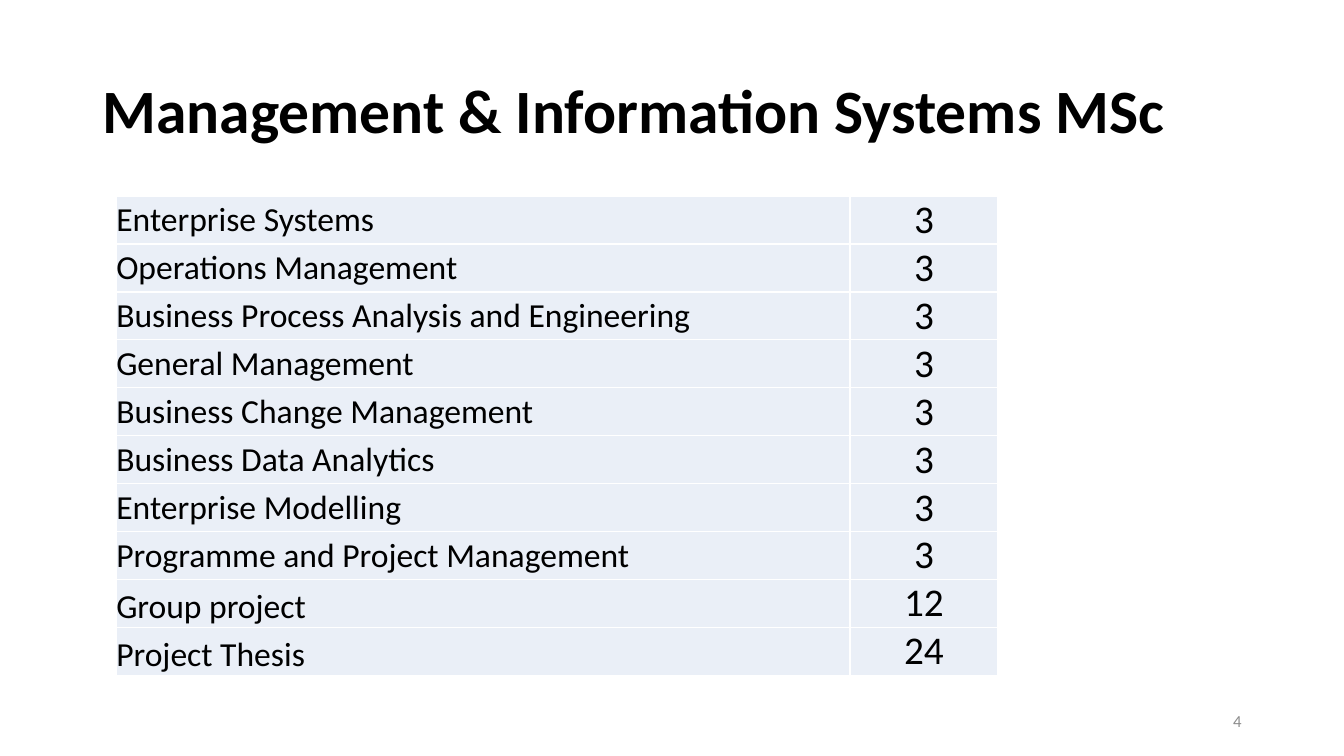
from lxml import etree
from pptx import Presentation
from pptx.dml.color import RGBColor
from pptx.enum import text
from pptx.oxml import ns
from pptx.util import Cm, Pt

BLACK = RGBColor(0x00, 0x00, 0x00)
GREY = RGBColor(0x8C, 0x8C, 0x8C)
WHITE = RGBColor(0xFF, 0xFF, 0xFF)
PALE_BLUE = RGBColor(0xEA, 0xEF, 0xF7)

MODULES = [
    ("Enterprise Systems", 3),
    ("Operations Management", 3),
    ("Business Process Analysis and Engineering", 3),
    ("General Management", 3),
    ("Business Change Management", 3),
    ("Business Data Analytics", 3),
    ("Enterprise Modelling", 3),
    ("Programme and Project Management", 3),
]
PROJECTS = [("Group project", 12), ("Project Thesis", 24)]

LEFT, CENTER, RIGHT = text.PP_ALIGN.LEFT, text.PP_ALIGN.CENTER, text.PP_ALIGN.RIGHT
MIDDLE, BOTTOM = text.MSO_ANCHOR.MIDDLE, text.MSO_ANCHOR.BOTTOM


class SlideBuilder:
    font_name = "Calibri"

    def __init__(self, slide):
        self.slide = slide

    def set_text(self, frame, content, size, color=BLACK, align=LEFT, bold=False):
        frame.word_wrap = True
        paragraph = frame.paragraphs[0]
        paragraph.text = content
        paragraph.alignment = align
        font = paragraph.font
        font.name, font.size, font.bold = self.font_name, Pt(size), bold
        font.color.rgb = color
        return paragraph

    def title(self, content, left, top, width, height):
        shape = self.slide.shapes.title
        shape.left, shape.top, shape.width, shape.height = left, top, width, height
        shape.text_frame.vertical_anchor = MIDDLE
        self.set_text(shape.text_frame, content, 44, bold=True).line_spacing = 0.9

    def page_number(self, content, left, top, width, height):
        frame = self.slide.shapes.add_textbox(left, top, width, height).text_frame
        frame.vertical_anchor = MIDDLE
        self.set_text(frame, content, 12, GREY, RIGHT)

    def cell(self, cell, content, size, align, anchor):
        cell.margin_left = cell.margin_right = cell.margin_top = cell.margin_bottom = 0
        cell.vertical_anchor = anchor
        self.set_text(cell.text_frame, content, size, align=align)
        self.cell_borders(cell)
        cell.fill.solid()
        cell.fill.fore_color.rgb = PALE_BLUE

    def cell_borders(self, cell):
        properties = cell._tc.get_or_add_tcPr()
        for side in ("a:lnL", "a:lnR", "a:lnT", "a:lnB"):
            line = etree.SubElement(properties, ns.qn(side), w=str(Pt(1)))
            fill = etree.SubElement(line, ns.qn("a:solidFill"))
            etree.SubElement(fill, ns.qn("a:srgbClr"), val=str(WHITE))

    def credit_table(self, groups, left, top, column_widths, row_height):
        """Draw (rows, name anchor) groups as one table of names and credits."""
        rows = [(name, credits, anchor) for group, anchor in groups for name, credits in group]
        table = self.slide.shapes.add_table(
            len(rows), len(column_widths), left, top,
            sum(column_widths), row_height * len(rows)).table
        table.first_row = table.horz_banding = False
        for column, width in zip(table.columns, column_widths):
            column.width = width
        for index, (name, credits, anchor) in enumerate(rows):
            self.cell(table.cell(index, 0), name, 24, LEFT, anchor)
            self.cell(table.cell(index, 1), str(credits), 28, CENTER, BOTTOM)


def main():
    presentation = Presentation()
    presentation.slide_width, presentation.slide_height = Cm(33.87), Cm(19.05)
    title_only = presentation.slide_layouts[5]
    builder = SlideBuilder(presentation.slides.add_slide(title_only))
    builder.title("Management & Information Systems MSc",
                  Cm(2.33), Cm(1.01), Cm(29.21), Cm(3.68))
    builder.credit_table([(MODULES, MIDDLE), (PROJECTS, BOTTOM)], Cm(2.93), Cm(4.94),
                         [Cm(18.49), Cm(3.73)], Cm(1.2))
    builder.page_number("4", Cm(23.92), Cm(17.66), Cm(7.62), Cm(1.01))
    presentation.save("out.pptx")


if __name__ == "__main__":
    main()
